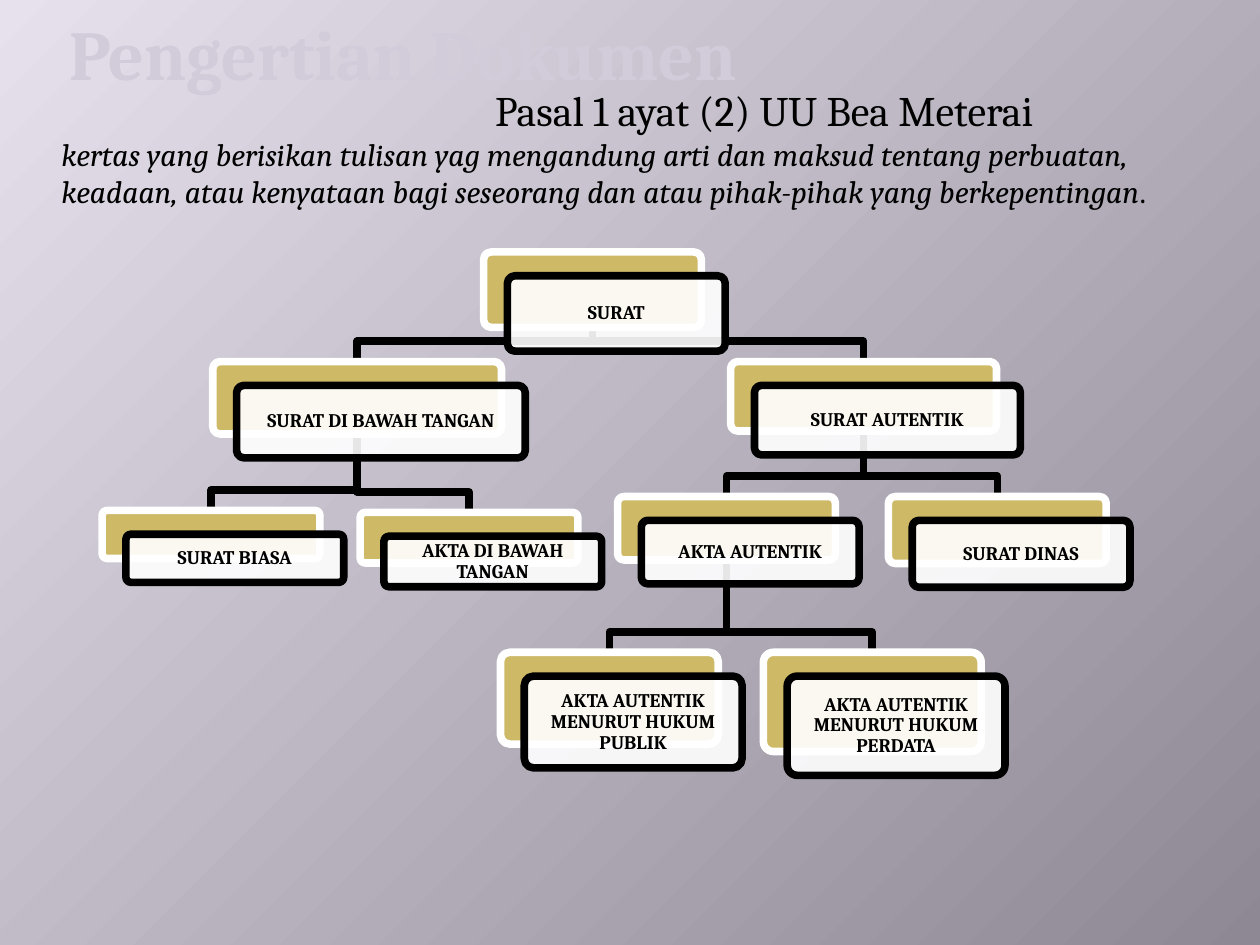
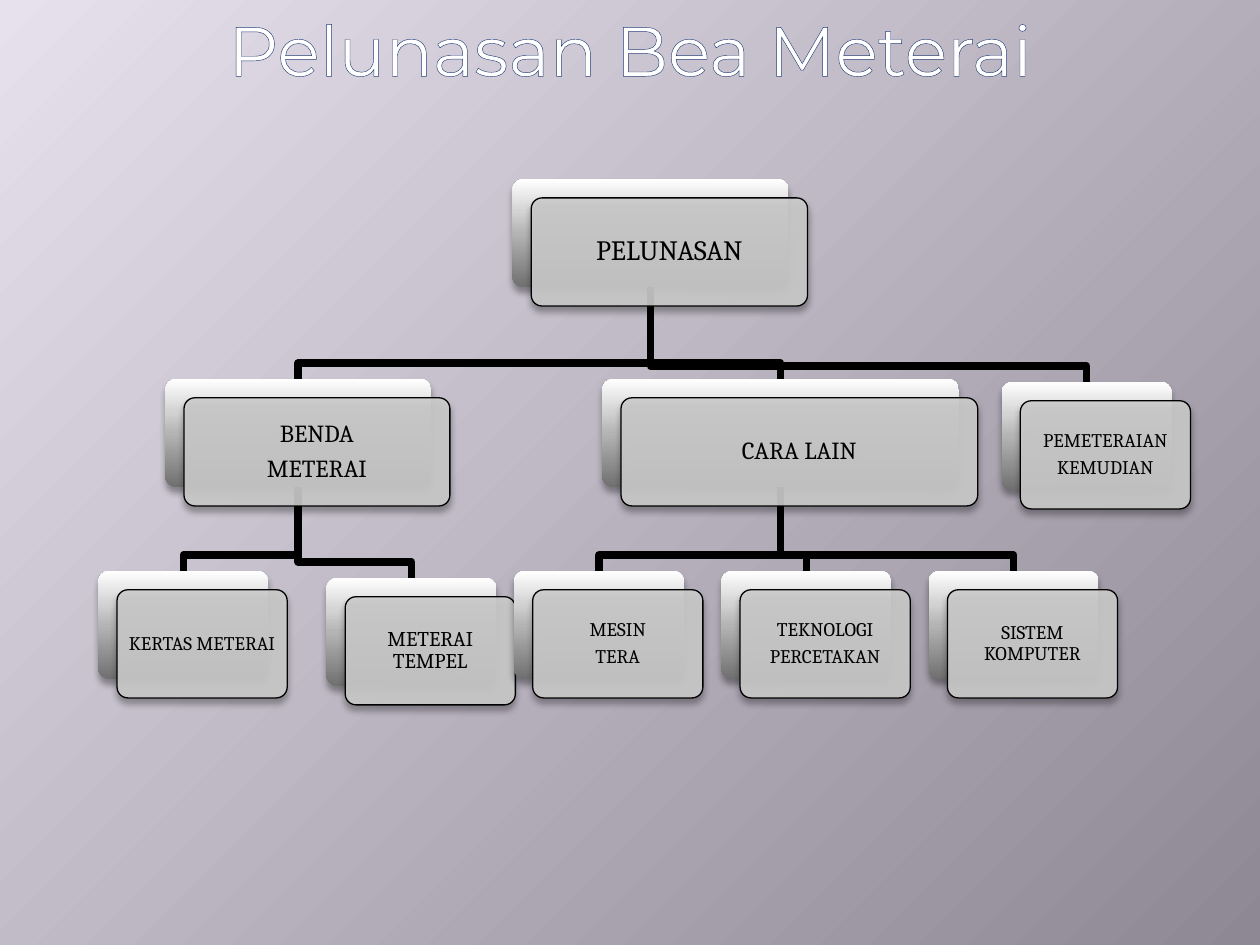
from dataclasses import dataclass

from lxml.etree import SubElement
from pptx import Presentation
from pptx.dml.color import RGBColor
from pptx.enum.shapes import MSO_SHAPE
from pptx.enum.text import MSO_ANCHOR, PP_ALIGN
from pptx.oxml.ns import qn
from pptx.util import Cm, Pt


# Shared colours, fonts and type sizes
@dataclass(frozen=True)
class Theme:
    ink: str = "000000"
    white: str = "FFFFFF"
    gold: str = "CEB966"
    silver: str = "CCCCCC"
    pale_title: str = "D1CBDA"
    title_outline: str = "253D75"
    backdrop: tuple = ((0, "E6E1EC"), (100, "8E8895"))
    steel: tuple = ((0, "707070"), (50, "B4B4B4"), (70, "D3D3D3"), (100, "FFFFFF"))
    serif: str = "Cambria"
    sans: str = "Montserrat"
    title_size: int = 40
    source_size: int = 24
    body_size: int = 18
    root_size: int = 16
    branch_size: int = 14
    leaf_size: int = 11
    wide_leaf_size: int = 12
    link_width: float = 4.33


THEME = Theme()


@dataclass(frozen=True)
class Area:
    """A place on the slide, in centimetres."""
    left: float
    top: float
    width: float
    height: float

    def lengths(self) -> tuple:
        return Cm(self.left), Cm(self.top), Cm(self.width), Cm(self.height)

    def moved(self, shift: float) -> "Area":
        return Area(self.left + shift, self.top + shift, self.width, self.height)

    @property
    def centre(self) -> float:
        return self.left + self.width / 2

    @property
    def bottom(self) -> float:
        return self.top + self.height


@dataclass(frozen=True)
class Card:
    """One node of a tree; each line of its label is a paragraph."""
    label: str
    area: Area
    parent: str = ""
    size: int = THEME.leaf_size


@dataclass(frozen=True)
class CardStyle:
    back: object  # one colour, or gradient stops
    back_line: str
    front: str
    line_width: float
    shift: float
    turn: float  # distance from the bend of a link to the child card
    bold: bool
    shadow: bool


OUTLINED = CardStyle(THEME.gold, THEME.white, THEME.white, THEME.link_width,
                     0.48, 0.41, True, False)
RAISED = CardStyle(THEME.steel, "", THEME.silver, 0.75, 0.38, 0.32, False, True)


def rgb(colour: str) -> RGBColor:
    return RGBColor.from_string(colour)


def add_node(parent, tag: str, **values):
    return SubElement(parent, qn(tag), {name: str(value) for name, value in values.items()})


def set_gradient(fill, holder, stops: tuple):
    """Give the fill these stops and return its element, still without direction."""
    fill.gradient()
    gradient = next(holder.iter(qn("a:gradFill")))
    gradient.clear()
    stop_list = add_node(gradient, "a:gsLst")
    for position, colour in stops:
        add_node(add_node(stop_list, "a:gs", pos=position * 1000), "a:srgbClr", val=colour)
    return gradient


def add_span(para, text: str, size: int, colour: str = THEME.ink, font: str = THEME.serif,
             bold: bool = False, italic: bool = False):
    span = para.add_run()
    span.text = text
    span.font.name, span.font.size = font, Pt(size)
    span.font.bold, span.font.italic = bold, italic
    span.font.color.rgb = rgb(colour)
    return span


def place_title(page, area: Area, text: str, align, **look):
    title = page.shapes.title
    title.left, title.top, title.width, title.height = area.lengths()
    title.text_frame.vertical_anchor = MSO_ANCHOR.TOP
    para = title.text_frame.paragraphs[0]
    para.alignment = align
    return add_span(para, text, THEME.title_size, **look)


def add_text_box(page, area: Area, wrap: bool):
    box = page.shapes.add_textbox(*area.lengths())
    box.text_frame.word_wrap = wrap
    return box.text_frame.paragraphs[0]


# Tree parts
def draw_link(page, parent: Area, child: Area, turn: float) -> None:
    bend = child.top - turn
    corners = [(parent.centre, parent.bottom), (parent.centre, bend),
               (child.centre, bend), (child.centre, child.top)]
    points = [(Cm(x), Cm(y)) for x, y in corners]
    builder = page.shapes.build_freeform(*points[0])
    builder.add_line_segments(points[1:], close=False)
    link = builder.convert_to_shape()
    link.shadow.inherit = False
    link.fill.background()
    link.line.color.rgb = rgb(THEME.ink)
    link.line.width = Pt(THEME.link_width)


def add_panel(page, area: Area, line: str, style: CardStyle):
    panel = page.shapes.add_shape(MSO_SHAPE.ROUNDED_RECTANGLE, *area.lengths())
    panel.adjustments[0] = 0.1
    if line:
        panel.line.color.rgb = rgb(line)
        panel.line.width = Pt(style.line_width)
    else:
        panel.line.fill.background()
    panel.shadow.inherit = False
    if style.shadow:
        effects = next(panel.element.iter(qn("a:effectLst")))
        shadow = add_node(effects, "a:outerShdw", blurRad=Pt(4), dist=Pt(3),
                          dir=5400000, rotWithShape=0)
        add_node(add_node(shadow, "a:srgbClr", val=THEME.ink), "a:alpha", val=35000)
    return panel


def draw_card(page, card: Card, style: CardStyle) -> None:
    back = add_panel(page, card.area, style.back_line, style)
    if isinstance(style.back, str):
        back.fill.solid()
        back.fill.fore_color.rgb = rgb(style.back)
    else:
        gradient = set_gradient(back.fill, back.element, style.back)
        add_node(gradient, "a:lin", ang=16200000, scaled=0)

    # Translucent front panel with the label
    front = add_panel(page, card.area.moved(style.shift), THEME.ink, style)
    front.fill.solid()
    front.fill.fore_color.rgb = rgb(style.front)
    fill_colour = front.element.spPr.find(qn("a:solidFill")).find(qn("a:srgbClr"))
    add_node(fill_colour, "a:alpha", val=90000)
    frame = front.text_frame
    frame.word_wrap = True
    frame.vertical_anchor = MSO_ANCHOR.MIDDLE
    frame.margin_left = frame.margin_right = Cm(0.13)
    frame.margin_top = frame.margin_bottom = Cm(0.13)
    for number, line in enumerate(card.label.split("\n")):
        para = frame.add_paragraph() if number else frame.paragraphs[0]
        para.alignment = PP_ALIGN.CENTER
        para.line_spacing = 0.9
        para.space_after = Pt(card.size * 0.35)
        add_span(para, line, card.size, bold=style.bold)


def draw_tree(page, cards: list[Card], style: CardStyle) -> None:
    areas = {card.label: card.area for card in cards}
    for card in cards:
        if card.parent:
            draw_link(page, areas[card.parent], card.area, style.turn)
    for card in cards:
        draw_card(page, card, style)


# Slide 1: what a document is
def build_document_page(page) -> None:
    place_title(page, Area(1.14, 0.08, 16, 1.9), "Pengertian Dokumen", PP_ALIGN.LEFT,
                colour=THEME.pale_title, bold=True)

    narrow = 4.39
    private, authentic, deed = "SURAT DI BAWAH TANGAN", "SURAT AUTENTIK", "AKTA AUTENTIK"
    draw_tree(page, [
        Card("SURAT", Area(9.75, 5.08, narrow, 1.52)),
        Card(private, Area(4.29, 7.29, 5.82, 1.46), "SURAT"),
        Card("SURAT BIASA", Area(2.06, 10.29, narrow, 0.97), private),
        Card("AKTA DI BAWAH TANGAN", Area(7.26, 10.33, narrow, 1.02), private),
        Card(authentic, Area(14.73, 7.29, 5.36, 1.4), "SURAT"),
        Card(deed, Area(12.45, 10.01, narrow, 1.28), authentic),
        Card("AKTA AUTENTIK MENURUT HUKUM PUBLIK", Area(10.09, 13.15, narrow, 1.85), deed),
        Card("AKTA AUTENTIK MENURUT HUKUM PERDATA", Area(15.39, 13.15, narrow, 2), deed),
        Card("SURAT DINAS", Area(17.91, 10.01, narrow, 1.35), authentic),
    ], OUTLINED)

    # Source and definition
    para = add_text_box(page, Area(9.73, 1.57, 12.65, 1.27), wrap=False)
    add_span(para, "Pasal 1 ayat (2) UU Bea Meterai", THEME.source_size)
    para = add_text_box(page, Area(0.99, 2.59, 22.63, 1.8), wrap=True)
    add_span(para, "kertas yang berisikan tulisan yag mengandung arti dan maksud tentang "
             "perbuatan, keadaan, atau kenyataan bagi seseorang dan atau pihak-pihak yang "
             "berkepentingan", THEME.body_size, italic=True)
    add_span(para, ".", THEME.body_size)


# Slide 2: how the duty is paid
def build_payment_page(page) -> None:
    span = place_title(page, Area(2.97, 0, 19.46, 1.96), "Pelunasan Bea Meterai",
                       PP_ALIGN.CENTER, colour=THEME.white, font=THEME.sans)
    properties = span.font.fill  # outline goes ahead of the fill
    properties.solid()
    properties.fore_color.rgb = rgb(THEME.white)
    run_style = page.shapes.title.element.find(".//" + qn("a:rPr"))
    outline = add_node(run_style, "a:ln", w=Pt(0.75))
    add_node(add_node(outline, "a:solidFill"), "a:srgbClr", val=THEME.title_outline)
    run_style.insert(0, outline)

    height, narrow = 2.18, 3.43
    stamps, other = "BENDA\nMETERAI", "CARA LAIN"
    machines = ["MESIN\nTERA", "TEKNOLOGI\nPERCETAKAN", "SISTEM KOMPUTER"]
    draw_tree(page, [
        Card("PELUNASAN", Area(10.33, 3.61, 5.57, height), size=THEME.root_size),
        Card(stamps, Area(3.33, 7.64, 5.36, height), "PELUNASAN", THEME.branch_size),
        Card("KERTAS METERAI", Area(1.98, 11.51, narrow, height), stamps),
        Card("METERAI TEMPEL", Area(6.58, 11.65, narrow, height), stamps,
             THEME.wide_leaf_size),
        Card(other, Area(12.14, 7.64, 7.19, height), "PELUNASAN", THEME.branch_size),
        *[Card(label, Area(10.36 + 4.18 * column, 11.51, narrow, height), other)
          for column, label in enumerate(machines)],
        Card("PEMETERAIAN\nKEMUDIAN", Area(20.19, 7.7, narrow, height), "PELUNASAN"),
    ], RAISED)


def main() -> None:
    deck = Presentation()
    deck.slide_width, deck.slide_height = Cm(25.4), Cm(19.05)

    # Shared backdrop, spreading from the top left corner
    master = deck.slide_master
    gradient = set_gradient(master.background.fill, master.element, THEME.backdrop)
    spread = add_node(gradient, "a:path", path="circle")
    add_node(spread, "a:fillToRect", r=100000, b=100000)

    title_only = deck.slide_layouts[5]
    for build in (build_document_page, build_payment_page):
        build(deck.slides.add_slide(title_only))
    deck.save("out.pptx")


if __name__ == "__main__":
    main()
